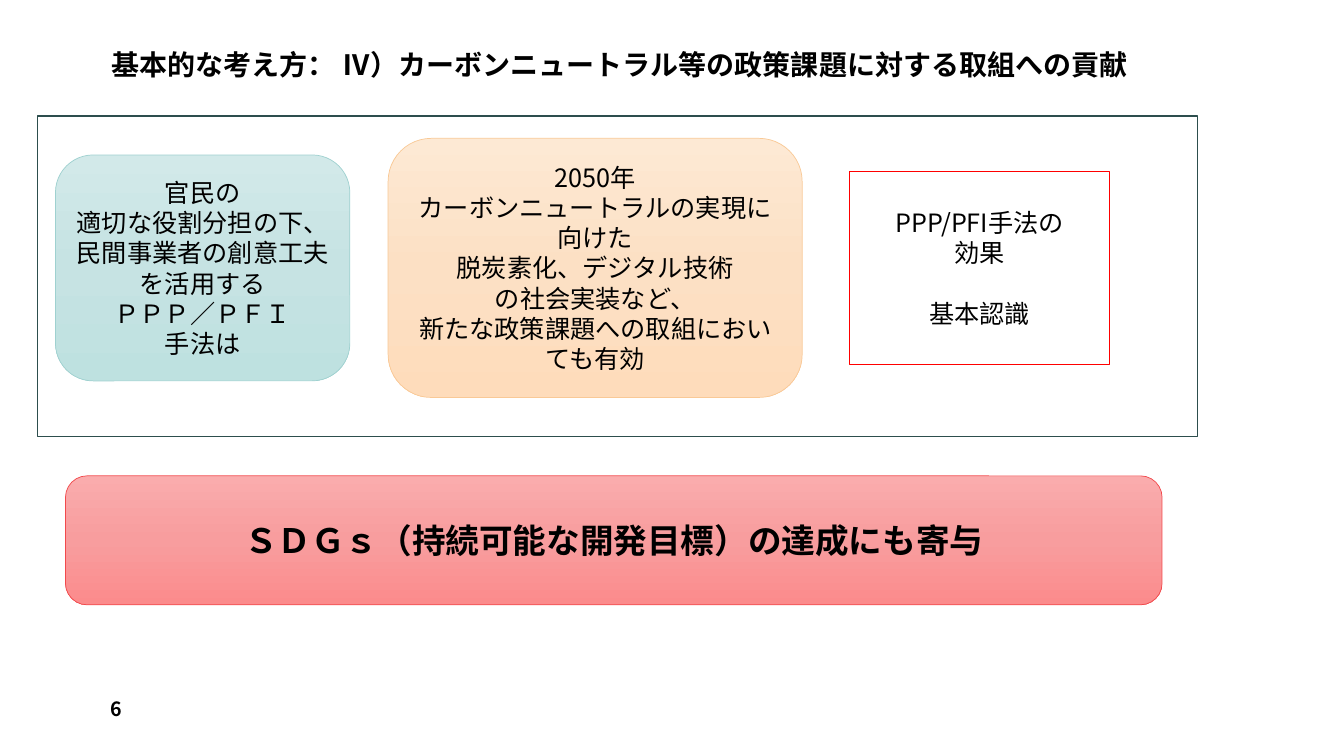
import copy
from dataclasses import dataclass

import pptx
import pptx.dml.color
import pptx.enum.dml
import pptx.enum.shapes
import pptx.enum.text
import pptx.oxml
import pptx.oxml.ns
import pptx.util

SLIDE_WIDTH = pptx.util.Inches(13.333)
SLIDE_HEIGHT = pptx.util.Inches(7.5)
GRID_COLUMNS = 32
GRID_ROWS = 18
CARD_CENTRE_ROW = 6.38
FONT_NAME = "Noto Sans CJK JP"

COLOURS = {
    "text": "000000",
    "teal_top": "D2E9E9",
    "teal_middle": "C6E3E3",
    "teal_bottom": "BEE1E0",
    "teal_line": "9FD1D0",
    "orange_top": "FDE9D4",
    "orange_middle": "FCE0C4",
    "orange_bottom": "FEDCBB",
    "orange_line": "F9C996",
    "red_top": "FAACAD",
    "red_middle": "F89D9E",
    "red_bottom": "FB8B8C",
    "red_line": "F2494C",
    "frame_line": "2D4E4D",
    "effect_line": "FF0000",
}

SHAPES = pptx.enum.shapes.MSO_SHAPE
ANCHORS = pptx.enum.text.MSO_ANCHOR
ALIGNMENTS = pptx.enum.text.PP_ALIGN


@dataclass(frozen=True)
class Area:
    column: float
    row: float
    columns: float
    rows: float

    def lengths(self) -> tuple[int, int, int, int]:
        return (
            round(SLIDE_WIDTH * self.column / GRID_COLUMNS),
            round(SLIDE_HEIGHT * self.row / GRID_ROWS),
            round(SLIDE_WIDTH * self.columns / GRID_COLUMNS),
            round(SLIDE_HEIGHT * self.rows / GRID_ROWS),
        )


@dataclass(frozen=True)
class Line:
    text: str
    space_before: float = 0


@dataclass(frozen=True)
class Label:
    area: Area
    text: str
    size: float
    anchor: ANCHORS
    line_spacing: float = 1.0


@dataclass(frozen=True)
class Box:
    area: Area
    preset: SHAPES
    line_colour: str
    line_width: float
    gradient: str = ""
    lines: tuple[Line, ...] = ()
    size: float = 18
    bold: bool = False


def card_area(column: float, columns: float, rows: float) -> Area:
    return Area(column, CARD_CENTRE_ROW - rows / 2, columns, rows)


TITLE = Label(
    Area(2.42, 1.01, 27.12, 1.06),
    "基本的な考え方： Ⅳ）カーボンニュートラル等の政策課題に対する取組への貢献",
    20, ANCHORS.BOTTOM, 0.9,
)
PAGE_NUMBER = Label(Area(2.4, 16.39, 7.01, 0.96), "6", 14, ANCHORS.MIDDLE)

BOXES = (
    Box(
        card_area(1.32, 7.01, 5.38), SHAPES.ROUNDED_RECTANGLE, "teal_line", 0.5, "teal",
        (
            Line("官民の"),
            Line("適切な役割分担の下、民間事業者の創意工夫を活用する"),
            Line("ＰＰＰ／ＰＦＩ"),
            Line("手法は"),
        ),
    ),
    Box(
        card_area(9.24, 9.86, 6.17), SHAPES.ROUNDED_RECTANGLE, "orange_line", 0.5, "orange",
        (
            Line("2050年"),
            Line("カーボンニュートラルの実現に向けた"),
            Line("脱炭素化、デジタル技術"),
            Line("の社会実装など、"),
            Line("新たな政策課題への取組においても有効"),
        ),
    ),
    Box(
        Area(1.56, 11.33, 26.11, 3.07), SHAPES.ROUNDED_RECTANGLE, "red_line", 0.5, "red",
        (Line("ＳＤＧｓ（持続可能な開発目標）の達成にも寄与"),), 24, True,
    ),
    Box(Area(0.89, 2.76, 27.62, 7.63), SHAPES.RECTANGLE, "frame_line", 1),
    Box(
        card_area(20.23, 6.19, 4.61), SHAPES.RECTANGLE, "effect_line", 0.75,
        lines=(Line("PPP/PFI手法の"), Line("効果"), Line("基本認識", 21.6)),
    ),
)


def colour(name: str) -> pptx.dml.color.RGBColor:
    return pptx.dml.color.RGBColor.from_string(COLOURS[name])


def style_font(font: pptx.text.text.Font, size: float, bold: bool) -> None:
    font.name = FONT_NAME
    font.size = pptx.util.Pt(size)
    font.bold = bold
    font.color.rgb = colour("text")
    latin = font._element.find(pptx.oxml.ns.qn("a:latin"))
    east_asian = copy.deepcopy(latin)
    east_asian.tag = pptx.oxml.ns.qn("a:ea")
    latin.addnext(east_asian)


def fill_gradient(fill: pptx.dml.fill.FillFormat, name: str) -> None:
    fill.gradient()
    fill.gradient_angle = 270
    first_stop = fill.gradient_stops[0]._gs
    first_stop.addnext(copy.deepcopy(first_stop))
    parts = ("top", "middle", "bottom")
    for index, (stop, part) in enumerate(zip(fill.gradient_stops, parts)):
        stop.position = index / 2
        stop.color.rgb = colour(f"{name}_{part}")


def add_label(slide: pptx.slide.Slide, label: Label) -> None:
    shape = slide.shapes.add_textbox(*label.area.lengths())
    frame = shape.text_frame
    frame.word_wrap = True
    frame.vertical_anchor = label.anchor
    paragraph = frame.paragraphs[0]
    paragraph.text = label.text
    paragraph.line_spacing = label.line_spacing
    style_font(paragraph.font, label.size, True)


def add_box(slide: pptx.slide.Slide, box: Box) -> None:
    shape = slide.shapes.add_shape(box.preset, *box.area.lengths())
    shape.shadow.inherit = False
    shape.line.color.rgb = colour(box.line_colour)
    shape.line.width = pptx.util.Pt(box.line_width)
    if box.gradient:
        fill_gradient(shape.fill, box.gradient)
    else:
        shape.fill.background()
    frame = shape.text_frame
    frame.word_wrap = True
    frame.vertical_anchor = ANCHORS.MIDDLE
    for index, line in enumerate(box.lines):
        paragraph = frame.add_paragraph() if index else frame.paragraphs[0]
        paragraph.text = line.text
        paragraph.alignment = ALIGNMENTS.CENTER
        paragraph.space_before = pptx.util.Pt(line.space_before)
        style_font(paragraph.font, box.size, box.bold)


def main() -> None:
    presentation = pptx.Presentation()
    presentation.slide_width = SLIDE_WIDTH
    presentation.slide_height = SLIDE_HEIGHT
    slide = presentation.slides.add_slide(presentation.slide_layouts[6])
    for label in (TITLE, PAGE_NUMBER):
        add_label(slide, label)
    for box in BOXES:
        add_box(slide, box)
    presentation.save("out.pptx")


if __name__ == "__main__":
    main()
